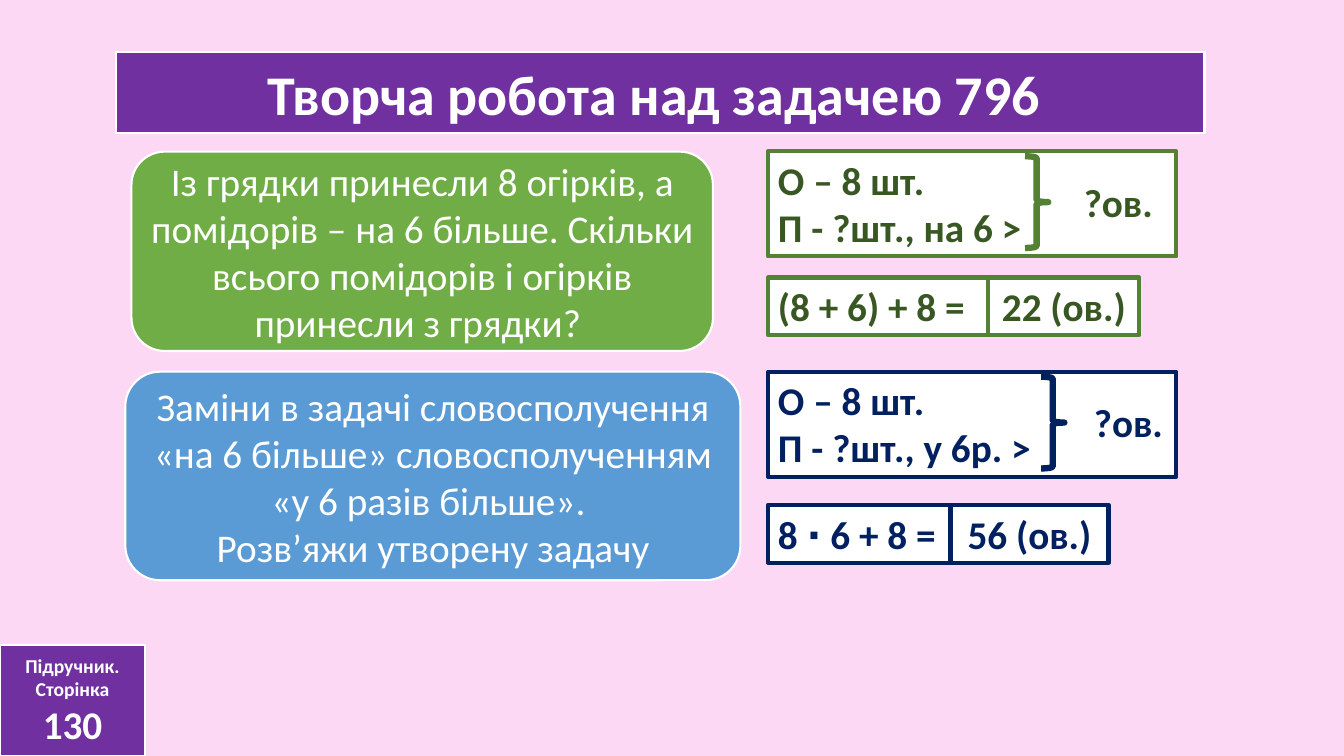
import pptx
import pptx.dml.color
import pptx.enum.shapes
import pptx.enum.text
import pptx.util

Pt = pptx.util.Pt
RGBColor = pptx.dml.color.RGBColor
SHAPE = pptx.enum.shapes.MSO_SHAPE
ALIGN = pptx.enum.text.PP_ALIGN
ANCHOR = pptx.enum.text.MSO_ANCHOR
AUTO_SIZE = pptx.enum.text.MSO_AUTO_SIZE

PINK = RGBColor(0xFC, 0xD8, 0xF4)
PURPLE = RGBColor(0x70, 0x30, 0xA0)
WHITE = RGBColor(0xFF, 0xFF, 0xFF)
GREEN = RGBColor(0x70, 0xAD, 0x47)
GREEN_LINE = RGBColor(0x54, 0x82, 0x35)
GREEN_TEXT = RGBColor(0x38, 0x57, 0x23)
BLUE = RGBColor(0x5B, 0x9B, 0xD5)
NAVY = RGBColor(0x00, 0x20, 0x60)

FONT = "Calibri"
BODY_SIZE = 28


def set_text(s, lines, sizes, color, bold, align):
    tf = s.text_frame
    tf.word_wrap = True
    tf.text = "\n".join(lines)
    for p, size in zip(tf.paragraphs, sizes):
        p.alignment = align
        for r in p.runs:
            r.font.name = FONT
            r.font.size = Pt(size)
            r.font.bold = bold
            r.font.color.rgb = color


def add_outlined(slide, kind, box, fill, line, width):
    s = slide.shapes.add_shape(kind, *map(Pt, box))
    s.shadow.inherit = False
    if fill is None:
        s.fill.background()
    else:
        s.fill.solid()
        s.fill.fore_color.rgb = fill
    s.line.color.rgb = line
    s.line.width = Pt(width)
    return s


def add_panel(slide, box, kind, fill, lines, sizes, bold):
    """Coloured panel with a white edge and centred white text."""
    s = add_outlined(slide, kind, box, fill, WHITE, 1.5)
    s.text_frame.vertical_anchor = ANCHOR.MIDDLE
    set_text(s, lines, sizes, WHITE, bold, ALIGN.CENTER)


def fit_text(s, lines, color, align):
    set_text(s, lines, [BODY_SIZE] * len(lines), color, True, align)
    s.text_frame.vertical_anchor = ANCHOR.TOP
    s.text_frame.auto_size = AUTO_SIZE.SHAPE_TO_FIT_TEXT


def add_white_box(slide, box, lines, line, color, align=ALIGN.LEFT):
    s = add_outlined(slide, SHAPE.RECTANGLE, box, WHITE, line, 3)
    fit_text(s, lines, color, align)


def add_solution(slide, box, line, color, givens, brace_x, question_x,
                 sum_y, expression, answer):
    """Short record of the problem, with its sum and answer below.

    Expression and answer are pairs of text and width."""
    left, top, width, height = box
    add_white_box(slide, box, givens, line, color)
    add_outlined(slide, SHAPE.RIGHT_BRACE, (left + brace_x, top + 3.6, 16.6, 65.5),
                 None, line, 4.5)
    question = slide.shapes.add_textbox(
        *map(Pt, (left + question_x, top + 15.5, 68.4, 41.2)))
    fit_text(question, ["?ов."], color, ALIGN.CENTER)

    x = left
    for (text, w), align in zip((expression, answer), (ALIGN.LEFT, ALIGN.CENTER)):
        add_white_box(slide, (x, top + sum_y, w, 41.2), [text], line, color, align)
        x += w


def main():
    prs = pptx.Presentation()
    prs.slide_width, prs.slide_height = Pt(960), Pt(540)
    slide = prs.slides.add_slide(prs.slide_layouts[6])
    slide.background.fill.solid()
    slide.background.fill.fore_color.rgb = PINK

    add_panel(slide, (0, 461, 103.7, 79), SHAPE.RECTANGLE, PURPLE,
              ["Підручник.", "Сторінка", "130"], [14, 14, 28], True)
    add_panel(slide, (82.8, 37.4, 777.6, 57.6), SHAPE.RECTANGLE, PURPLE,
              ["Творча робота над задачею 796 "], [40], True)

    add_panel(slide, (93.9, 108.3, 415.4, 142.4), SHAPE.ROUNDED_RECTANGLE, GREEN,
              ["Із грядки принесли 8 огірків, а помідорів – на 6 більше. "
               "Скільки всього помідорів і огірків принесли з грядки? "],
              [BODY_SIZE], False)
    add_solution(slide, (548.6, 108, 291.6, 75.1), GREEN_LINE, GREEN_TEXT,
                 ["О – 8 шт.", "П - ?шт., на 6 >"], 183.6, 216, 90.2,
                 ("(8 + 6) + 8 =", 157.3), ("22 (ов.)", 108))

    add_panel(slide, (89.5, 265.5, 439.4, 149), SHAPE.ROUNDED_RECTANGLE, BLUE,
              ["Заміни в задачі словосполучення «на 6 більше» "
               "словосполученням «у 6 разів більше». ",
               "Розв’яжи утворену задачу"], [BODY_SIZE] * 2, False)
    add_solution(slide, (548.6, 265.5, 291.6, 75.1), NAVY, NAVY,
                 ["О – 8 шт.", "П - ?шт., у 6р. >"], 195.1, 223.2, 95.2,
                 ("8 ∙ 6 + 8 =", 130.3), ("56 (ов.)", 113))

    prs.save("out.pptx")


if __name__ == "__main__":
    main()
